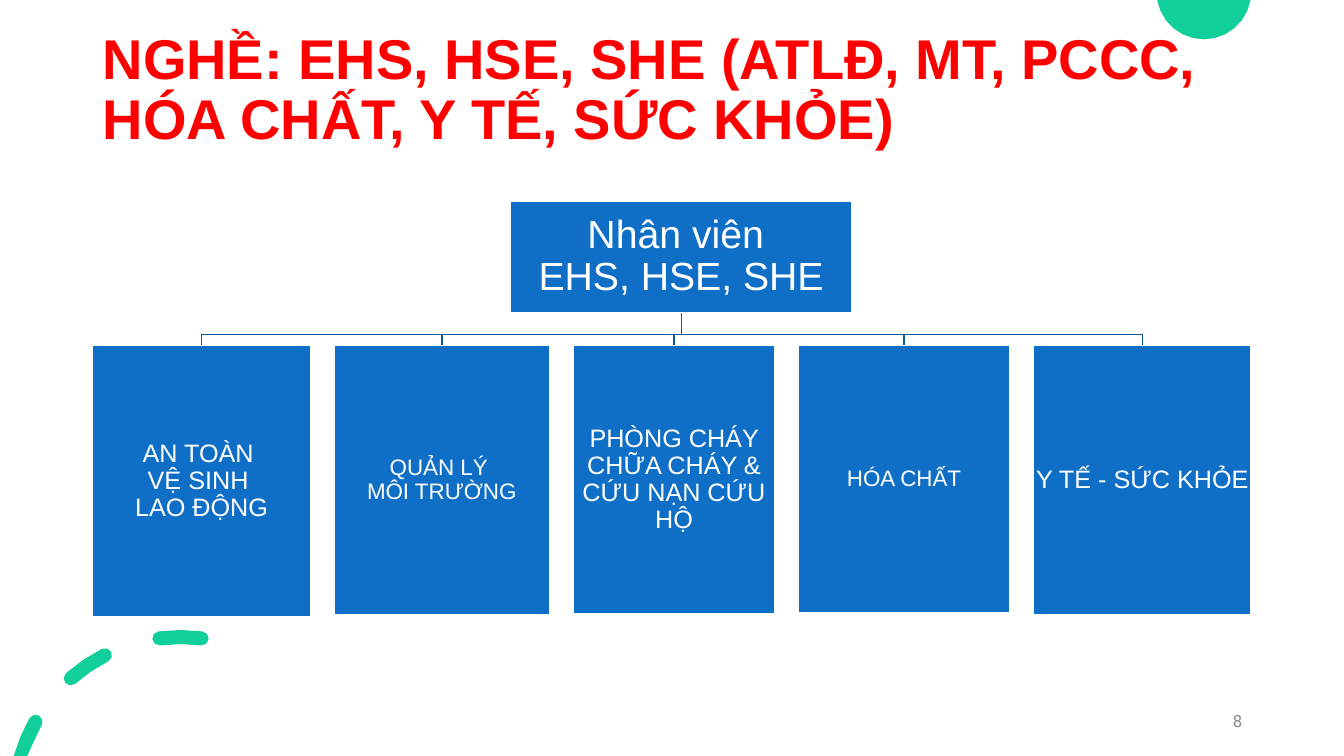
from math import cos, radians, sin

from pptx import Presentation
from pptx.dml.color import RGBColor
from pptx.enum.shapes import MSO_SHAPE
from pptx.enum.text import MSO_ANCHOR, PP_ALIGN
from pptx.util import Pt

PX = 9144  # 100 px to the inch
WIDTH, HEIGHT = 1333, 750
RECT = MSO_SHAPE.RECTANGLE
MIDDLE = MSO_ANCHOR.MIDDLE
LEFT, CENTER, RIGHT = PP_ALIGN.LEFT, PP_ALIGN.CENTER, PP_ALIGN.RIGHT
COLORS = {
    "green": "10CF9B",
    "red": "FF0000",
    "gray": "8C8C8C",
    "blue": "0F6FC6",
    "branch": "0C599F",
    "white": "FFFFFF",
}

ROOT = "Nhân viên \vEHS, HSE, SHE"
# label, width, height, font size
BRANCHES = [
    ("AN TOÀN \vVỆ SINH \vLAO ĐỘNG", 216, 269, 18),
    ("QUẢN LÝ \vMÔI TRƯỜNG", 214, 267, 16),
    ("PHÒNG CHÁY CHỮA CHÁY & CỨU NẠN CỨU HỘ", 200, 266, 18),
    ("HÓA CHẤT", 210, 265, 16),
    ("Y TẾ - SỨC KHỎE", 216, 267, 18),
]


def rgb(name):
    return RGBColor.from_string(COLORS[name])


def emu(*lengths):
    return [round(n * PX) for n in lengths]


def set_text(sp, text, size, color, align, font="Arial", bold=False, spacing=1.0):
    tf = sp.text_frame
    tf.word_wrap = True
    tf.vertical_anchor = MIDDLE
    p = tf.paragraphs[0]
    p.text = text
    p.alignment = align
    p.line_spacing = spacing
    p.font.name = font
    p.font.size = Pt(size)
    p.font.bold = bold
    p.font.color.rgb = rgb(color)


def add_outline(slide, contours, close):
    """One freeform made of one or more contours."""
    contours = [[emu(x, y) for x, y in points] for points in contours]
    builder = slide.shapes.build_freeform(*contours[0][0], scale=1.0)
    for i, points in enumerate(contours):
        if i:
            builder.move_to(*points[0])
        builder.add_line_segments(points[1:], close=close)
    sp = builder.convert_to_shape()
    sp.shadow.inherit = False
    return sp


def add_green(slide, contours):
    sp = add_outline(slide, contours, True)
    sp.fill.solid()
    sp.fill.fore_color.rgb = rgb("green")
    sp.line.fill.background()


def on_circle(cx, cy, radius, degrees):
    """Point on a circle, in degrees clockwise from its left side."""
    a = radians(degrees)
    return cx - radius * cos(a), cy - radius * sin(a)


def arc(cx, cy, radius, start, end, steps):
    """Points from start up to, but without, end."""
    step = (end - start) / steps
    return [on_circle(cx, cy, radius, start + step * i) for i in range(steps)]


def add_decoration(slide, left, top, width, height):
    # Circle cut off by the top edge
    circle = (left + width - 139, top - 8, 47)
    add_green(slide, [arc(*circle, 190, 350, 12) + [on_circle(*circle, 350)]])

    # Dashed ring in the bottom corner, with round ends, cut off by the bottom edge
    bottom = top + height
    cx, cy, radius, half = left + 179, bottom + 47, 165, 7
    dashes = []
    for start, end in [(15.9, 29.4), (48.7, 63), (82.7, 97.3)]:
        points = (
            arc(cx, cy, radius + half, start, end, 2)
            + arc(*on_circle(cx, cy, radius, end), half, end, end + 180, 4)
            + arc(cx, cy, radius - half, end, start, 2)
            + arc(*on_circle(cx, cy, radius, start), half, start + 180, start + 360, 4)
        )
        dashes.append([(x, min(y, bottom)) for x, y in points])
    add_green(slide, dashes)


def add_title(slide, left, top, width, height):
    sp = slide.shapes.add_textbox(*emu(left, top, width, height))
    set_text(sp, "NGHỀ: EHS, HSE, SHE (ATLĐ, MT, PCCC, HÓA CHẤT, Y TẾ, SỨC KHỎE)",
             40, "red", LEFT, bold=True, spacing=0.9)


def add_page_number(slide, left, top, width, height):
    sp = slide.shapes.add_textbox(*emu(left, top, width, height))
    set_text(sp, "8", 12, "gray", RIGHT, font="Roboto")


def add_node(slide, text, size, inset, box):
    sp = slide.shapes.add_shape(RECT, *emu(*box))
    sp.shadow.inherit = False
    sp.fill.solid()
    sp.fill.fore_color.rgb = rgb("blue")
    sp.line.color.rgb = rgb("white")
    sp.line.width = Pt(1)
    tf = sp.text_frame
    tf.margin_left = tf.margin_right = tf.margin_top = tf.margin_bottom = inset * PX
    set_text(sp, text, size, "white", CENTER, spacing=0.9)


def add_org_chart(slide, left, top, width):
    root_box = (left + 414, top, 339, 110)
    root_x, root_bottom = left + 584, top + 110
    bus_y, row_y = top + 132, top + 143
    gap = (width - sum(b[1] for b in BRANCHES)) / (len(BRANCHES) - 1)

    boxes = []
    x = left
    for _, w, h, _ in BRANCHES:
        boxes.append((x, row_y, w, h))
        x += w + gap

    # Branch lines, behind the boxes
    for x, y, w, _ in reversed(boxes):
        mid = x + w / 2
        route = [(root_x, root_bottom), (root_x, bus_y), (mid, bus_y), (mid, y)]
        sp = add_outline(slide, [route], False)
        sp.fill.background()
        sp.line.color.rgb = rgb("branch")
        sp.line.width = Pt(1)

    # Boxes
    add_node(slide, ROOT, 28, 2, root_box)
    for (text, _, _, size), box in zip(BRANCHES, boxes):
        add_node(slide, text, size, 1, box)


def main():
    prs = Presentation()
    prs.slide_width, prs.slide_height = emu(WIDTH, HEIGHT)
    slide = prs.slides.add_slide(prs.slide_layouts[6])
    add_decoration(slide, 0, 0, WIDTH, HEIGHT)
    add_title(slide, 92, 18, 1150, 145)
    add_page_number(slide, 942, 695, 300, 40)
    add_org_chart(slide, 92, 200, 1149)
    prs.save("out.pptx")


if __name__ == "__main__":
    main()
